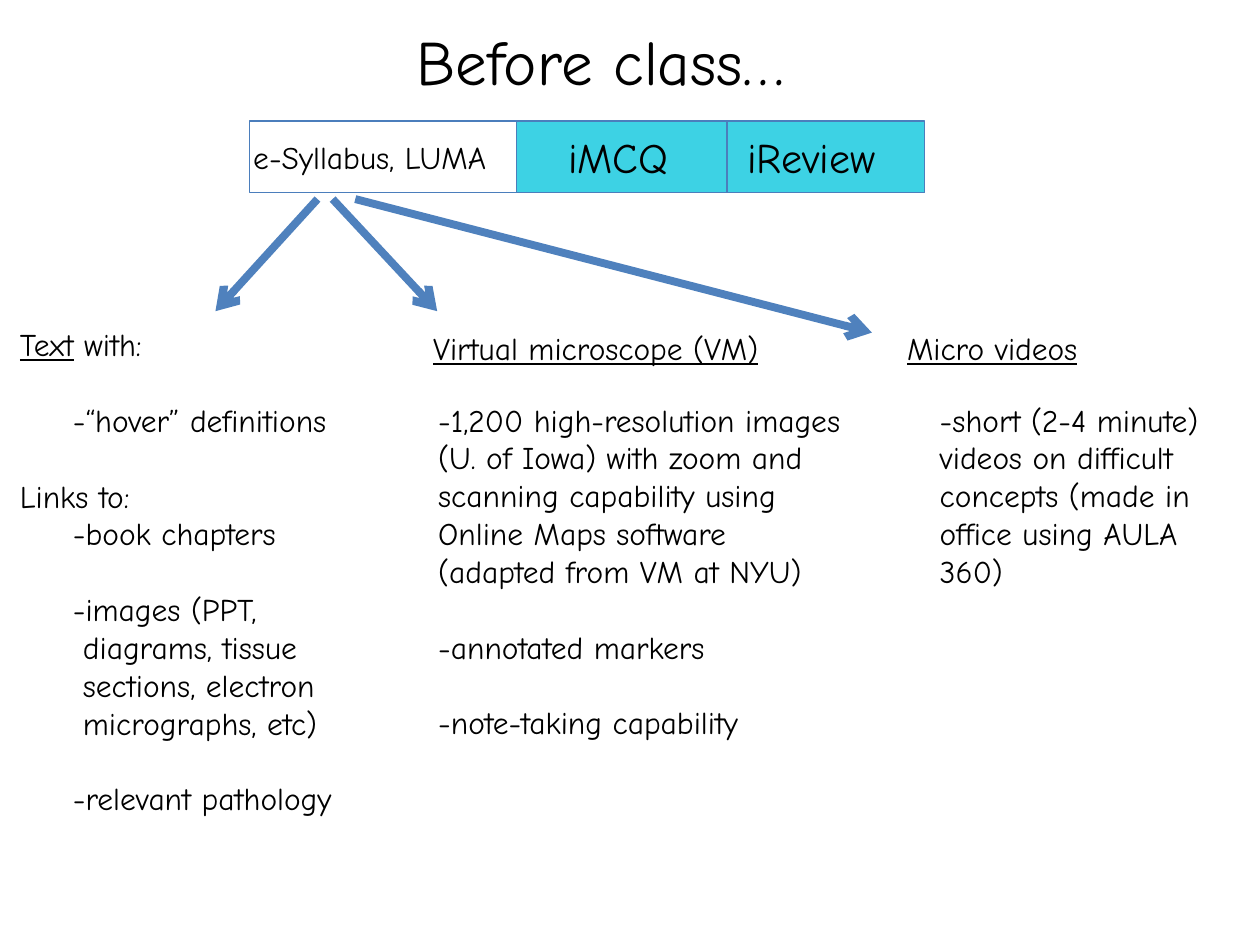
import pptx
import pptx.dml.color
import pptx.enum.shapes
import pptx.enum.text
import pptx.oxml
import pptx.oxml.ns
import pptx.util

FONT = "Comic Neue"
BODY_SIZE = 18
BLANK_LINE = 21.7
ITEM, HANGING = (0.42, 0), (0.5, -0.08)
FLUSH = (0, 0)

TITLE = "Before class…"
TITLE_BOX = (3.21, 0.13, 3.48, 0.71)

BAR_LEFT, BAR_TOP, BAR_HEIGHT = 1.98, 0.96, 0.57
STAGES = [
    ("e-Syllabus, LUMA", 2.12, 0.03, 18, None),
    ("iMCQ", 1.67, 0.41, 24, "3DD2E4"),
    ("iReview", 1.57, 0.16, 24, "3DD2E4"),
]

ARROW_START, ARROWS = 1.58, [(2.52, 1.71, 2.47), (2.64, 3.47, 2.47), (2.82, 6.92, 2.64)]

# Each line: (underlined text, plain text, blank lines before, indent)
COLUMNS = [
    ((0.06, 2.53, 2.98, 4.04), [
        ("Text", " with:", 0, FLUSH),
        ("", "-“hover” definitions", 1, ITEM),
        ("", "Links to:", 1, FLUSH),
        ("", "-book chapters", 0, ITEM),
        ("", "-images (PPT,\vdiagrams, tissue\vsections, electron\vmicrographs, etc)", 1, HANGING),
        ("", "-relevant pathology", 1, ITEM),
    ]),
    ((3.34, 2.56, 3.06, 0.4), [("Virtual microscope (VM)", "", 0, FLUSH)]),
    ((3.38, 3.13, 3.67, 2.83), [
        ("", "-1,200 high-resolution images\v(U. of Iowa) with zoom and\v"
             "scanning capability using\vOnline Maps software\v(adapted from VM at NYU)", 0, FLUSH),
        ("", "-annotated markers", 1, FLUSH),
        ("", "-note-taking capability", 1, FLUSH),
    ]),
    ((7.1, 2.56, 1.69, 0.4), [("Micro videos", "", 0, FLUSH)]),
    ((7.36, 3.13, 2.58, 1.62), [
        ("", "-short (2-4 minute) videos on difficult concepts (made in", 0, FLUSH),
        ("", "office using AULA 360)", 0, FLUSH),
    ]),
]


def inches(*lengths):
    return [pptx.util.Inches(length) for length in lengths]


def color(value):
    return pptx.dml.color.RGBColor.from_string(value)


def style(paragraph, size):
    paragraph.font.name = FONT
    paragraph.font.size = pptx.util.Pt(size)
    paragraph.font.color.rgb = color("000000")


def add_text(slide, box, lines, size=BODY_SIZE, wrap=True):
    frame = slide.shapes.add_textbox(*inches(*box)).text_frame
    frame.word_wrap = wrap
    for index, (underlined, plain, blanks, (margin, indent)) in enumerate(lines):
        paragraph = frame.paragraphs[0] if index == 0 else frame.add_paragraph()
        paragraph.text = plain
        if underlined:
            paragraph.text = ""
            heading = paragraph.add_run()
            heading.text = underlined
            heading.font.underline = True
            if plain:
                paragraph.add_run().text = plain
        style(paragraph, size)
        paragraph.space_before = pptx.util.Pt(blanks * BLANK_LINE)
        properties = paragraph._p.get_or_add_pPr()
        properties.set("marL", str(pptx.util.Inches(margin)))
        properties.set("indent", str(pptx.util.Inches(indent)))


def add_stage(slide, left, name, width, inset, size, fill):
    stage = slide.shapes.add_shape(
        pptx.enum.shapes.MSO_SHAPE.RECTANGLE, *inches(left, BAR_TOP, width, BAR_HEIGHT))
    stage.shadow.inherit = False
    if fill:
        stage.fill.solid()
        stage.fill.fore_color.rgb = color(fill)
    else:
        stage.fill.background()
    stage.line.color.rgb = color("4B7EBC")
    stage.line.width = pptx.util.Pt(0.75)
    frame = stage.text_frame
    frame.margin_left, frame.margin_right = inches(inset, 0)
    frame.vertical_anchor = pptx.enum.text.MSO_ANCHOR.MIDDLE
    label = frame.paragraphs[0]
    label.text = name
    label.alignment = pptx.enum.text.PP_ALIGN.LEFT
    style(label, size)


def add_arrow(slide, start, end, bottom):
    arrow = slide.shapes.add_connector(
        pptx.enum.shapes.MSO_CONNECTOR.STRAIGHT, *inches(start, ARROW_START, end, bottom))
    arrow.line.color.rgb = color("4F81BD")
    arrow.line.width = pptx.util.Pt(4.5)
    head = pptx.oxml.ns.qn("a:tailEnd")
    arrow.line._get_or_add_ln().append(
        arrow._element.makeelement(head, {"type": "arrow"}))
    arrow._element.spPr.append(
        arrow._element.makeelement(pptx.oxml.ns.qn("a:effectLst"), {}))


def main():
    """Build the slide on what students use before class."""
    deck = pptx.Presentation()
    deck.slide_width, deck.slide_height = inches(10, 7.5)
    slide = deck.slides.add_slide(deck.slide_layouts[6])
    for arrow in ARROWS:
        add_arrow(slide, *arrow)
    left = BAR_LEFT
    for stage in STAGES:
        add_stage(slide, left, *stage)
        left += stage[1]
    add_text(slide, TITLE_BOX, [("", TITLE, 0, FLUSH)], 36, wrap=False)
    for box, lines in COLUMNS:
        add_text(slide, box, lines)
    deck.save("out.pptx")


if __name__ == "__main__":
    main()
